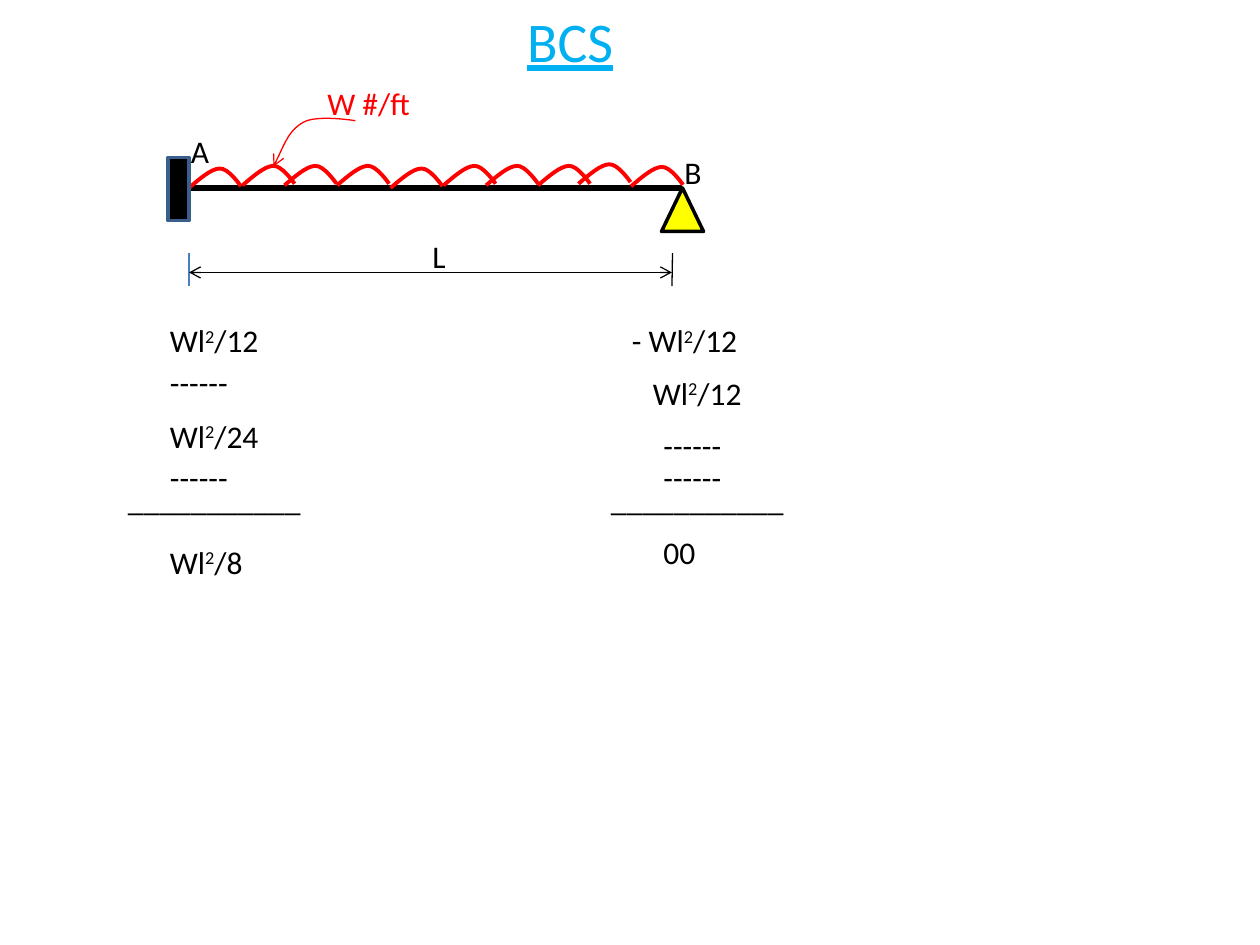
from dataclasses import dataclass

from lxml import etree
from pptx import Presentation
from pptx import util as u
from pptx.dml.color import RGBColor
from pptx.enum import shapes, text
from pptx.oxml.ns import qn


@dataclass(frozen=True)
class Theme:
    font: str = "Calibri"
    ink: str = "000000"
    load: str = "FF0000"
    title: str = "00B0F0"
    support: str = "FFFF00"
    wall_edge: str = "3A5F8C"
    witness: str = "4B7EBC"
    body_size: int = 18
    title_size: int = 32
    thin: float = 0.75
    arch: float = 2.25
    edge: float = 2
    beam: float = 3


THEME = Theme()
COLS, ROWS = 120, 90
WIDTH, HEIGHT = u.Inches(10), u.Inches(7.5)
ARCH = [(0, 0), (1.05, -0.9), (2.1, -1.8), (2.9, -1.85),
        (3.75, -1.95), (4.95, -0.15), (4.95, -0.15)]
ARCH_STARTS = [(18, 17.9), (23.1, 17.65), (27.1, 17.65), (32.1, 17.65),
               (37.2, 17.9), (42.25, 17.65), (46.3, 17.65), (51.25, 17.65),
               (55.1, 17.5), (60.1, 17.75)]
POINTER = [(26.05, 15.85), (26.9, 14.15), (27.6, 12.35), (28.9, 11.65),
           (30.2, 10.9), (33.85, 11.5), (33.85, 11.5)]
DASHES = "-" * 6
RULE = "_" * 11
MOMENTS = [
    (15, 30, 12, "Wl^2^/12"), (59, 30, 13, "- Wl^2^/12"),
    (15, 34, 10, DASHES), (61, 35, 12, "Wl^2^/12"),
    (15, 39.1, 12, "Wl^2^/24"), (62, 40, 10, DASHES),
    (15, 43, 10, DASHES), (62, 43, 10, DASHES),
    (11, 45.1, 20, RULE), (57, 45.1, 20, RULE),
    (15, 51.1, 12, "Wl^2^/8"), (62, 50.15, 9, "00"),
]


def x(col):
    return u.Emu(round(WIDTH * col / COLS))


def y(row):
    return u.Emu(round(HEIGHT * row / ROWS))


def style_line(sp, color, width, head=False, tail=False):
    sp.line.color.rgb = RGBColor.from_string(color)
    sp.line.width = u.Pt(width)
    ln = sp.element.spPr.find(qn("a:ln"))
    for tag, wanted in (("a:headEnd", head), ("a:tailEnd", tail)):
        if wanted:
            etree.SubElement(ln, qn(tag), type="arrow")


def write(tf, content, size=THEME.body_size, color=THEME.ink, underline=False):
    tf.word_wrap = True
    tf.auto_size = text.MSO_AUTO_SIZE.SHAPE_TO_FIT_TEXT
    tf.vertical_anchor = text.MSO_ANCHOR.TOP
    p = tf.paragraphs[0]
    p.alignment = text.PP_ALIGN.LEFT
    for i, part in enumerate(content.split("^")):
        r = p.add_run()
        r.text = part
        r.font.name = THEME.font
        r.font.size = u.Pt(size)
        r.font.color.rgb = RGBColor.from_string(color)
        if underline:
            r.font.underline = True
        if i % 2:
            r.font._element.set("baseline", "30000")


def add_text(parent, col, row, cols, content, **fmt):
    sp = parent.add_textbox(x(col), y(row), x(cols), y(4.8))
    write(sp.text_frame, content, **fmt)


def add_line(parent, start, end, color=THEME.ink, width=THEME.thin, **ends):
    sp = parent.add_connector(shapes.MSO_CONNECTOR.STRAIGHT, x(start[0]),
                              y(start[1]), x(end[0]), y(end[1]))
    style_line(sp, color, width, **ends)
    etree.SubElement(sp.element.spPr, qn("a:effectLst"))


def add_block(parent, kind, box, fill, edge):
    col, row, cols, rows = box
    sp = parent.add_shape(kind, x(col), y(row), x(cols), y(rows))
    sp.shadow.inherit = False
    sp.fill.solid()
    sp.fill.fore_color.rgb = RGBColor.from_string(fill)
    style_line(sp, edge, THEME.edge)


def add_curve(parent, points, width, **ends):
    points = [(x(col), y(row)) for col, row in points]
    builder = parent.build_freeform(*points[0])
    builder.add_line_segments(points[1:], close=False)
    sp = builder.convert_to_shape()
    sp.shadow.inherit = False
    sp.fill.background()
    style_line(sp, THEME.load, width, **ends)
    outline = next(sp.element.iter(qn("a:path")))
    segments = outline.findall(qn("a:lnTo"))
    for i in range(0, len(segments), 3):
        curve = etree.SubElement(outline, qn("a:cubicBezTo"))
        for segment in segments[i:i + 3]:
            curve.append(segment[0])
            outline.remove(segment)


def add_title(s):
    sp = s.shapes.title
    sp.left, sp.top, sp.width, sp.height = x(49), y(0), x(13), y(7.7)
    write(sp.text_frame, "BCS", size=THEME.title_size, color=THEME.title,
          underline=True)


def add_beam(parent):
    add_line(parent, (18, 17.9), (65, 17.9), width=THEME.beam)
    add_block(parent, shapes.MSO_SHAPE.ISOSCELES_TRIANGLE,
              (63, 17.9, 4, 4.15), THEME.support, THEME.ink)
    for col, row in ARCH_STARTS:
        add_curve(parent, [(col + dx, row + dy) for dx, dy in ARCH], THEME.arch)
    add_curve(parent, POINTER, THEME.thin, head=True)
    add_block(parent, shapes.MSO_SHAPE.RECTANGLE, (16, 15, 2, 6),
              THEME.ink, THEME.wall_edge)
    add_line(parent, (18, 24.1), (18, 27.25), color=THEME.witness)
    add_line(parent, (64.05, 24.1), (64, 27.25))
    add_line(parent, (18, 25.95), (64, 25.95), head=True, tail=True)
    add_text(parent, 30, 7.45, 13, "W #/ft", color=THEME.load)
    add_text(parent, 40, 22, 6, "L")
    add_text(parent, 17, 12, 5, "A")
    add_text(parent, 64, 14, 5, "B")


def main():
    prs = Presentation()
    prs.slide_width, prs.slide_height = WIDTH, HEIGHT
    s = prs.slides.add_slide(prs.slide_layouts[5])
    add_title(s)
    add_beam(s.shapes.add_group_shape().shapes)
    for moment in MOMENTS:
        add_text(s.shapes, *moment)
    prs.save("out.pptx")


if __name__ == "__main__":
    main()
